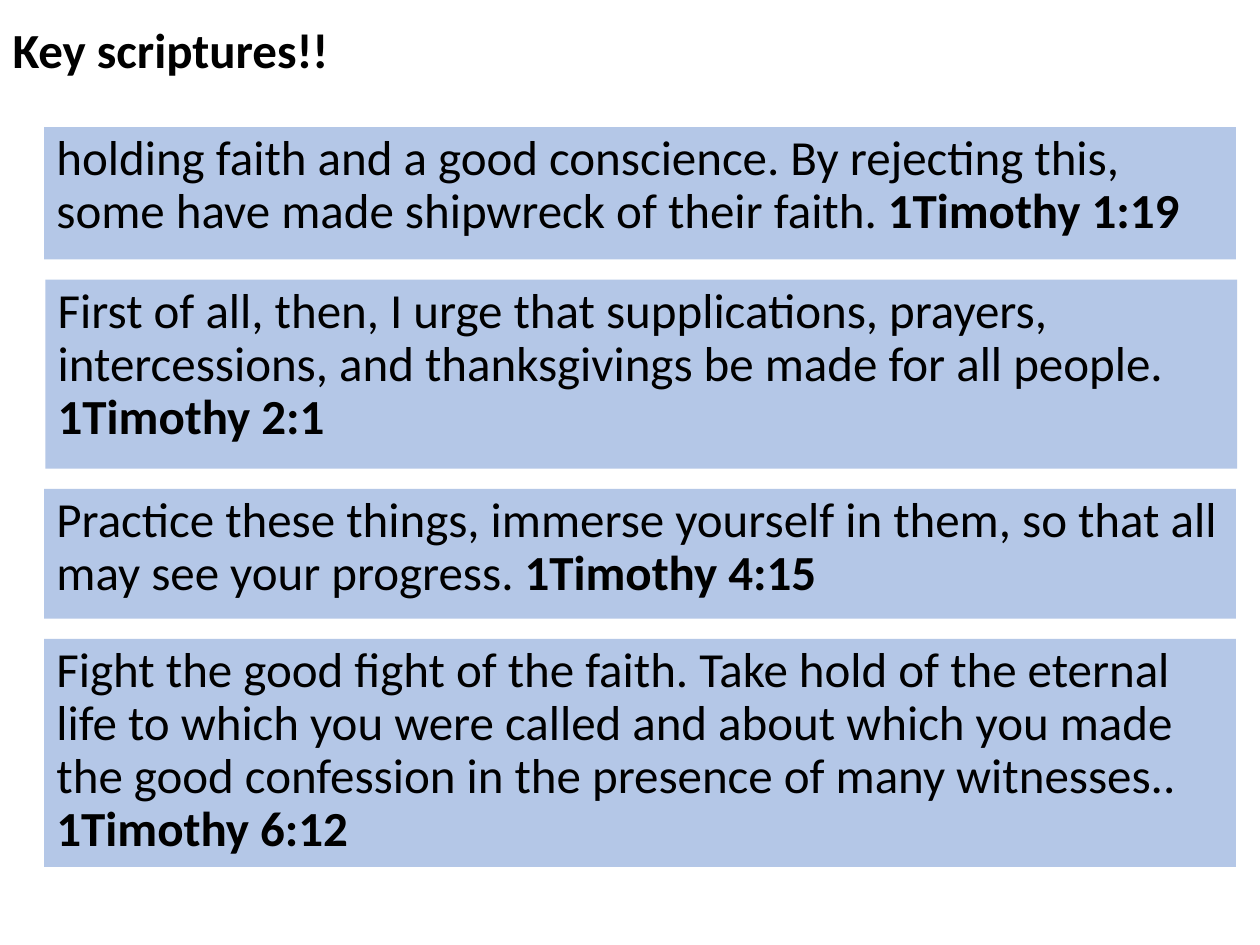
from pptx import Presentation
from pptx.dml.color import RGBColor
from pptx.enum.shapes import MSO_SHAPE
from pptx.enum.text import MSO_ANCHOR, MSO_AUTO_SIZE, PP_ALIGN
from pptx.util import Inches, Pt


def color(code):
    return RGBColor.from_string(code)


class Deck:
    font = "Calibri"
    size = 28
    ink = "000000"
    panel = "B4C7E7"
    width = 9.46

    def __init__(self):
        self.prs = Presentation()
        self.prs.slide_width = Inches(10)
        self.prs.slide_height = Inches(7.5)
        self.slide = self.prs.slides.add_slide(self.prs.slide_layouts[5])

    def text(self, shape, runs):
        frame = shape.text_frame
        frame.word_wrap = True
        frame.auto_size = MSO_AUTO_SIZE.NONE
        frame.vertical_anchor = MSO_ANCHOR.TOP
        para = frame.paragraphs[0]
        para.alignment = PP_ALIGN.LEFT
        para.line_spacing = 0.9
        para.space_before = Pt(10)
        for words, bold in runs:
            run = para.add_run()
            run.text = words
            run.font.name = self.font
            run.font.size = Pt(self.size)
            run.font.bold = bold
            run.font.color.rgb = color(self.ink)

    def title(self, words, left, top, height):
        shape = self.slide.shapes.title
        shape.left, shape.top = Inches(left), Inches(top)
        shape.width, shape.height = Inches(self.width), Inches(height)
        self.text(shape, [(words, True)])

    def verse(self, words, source, left, top, height):
        shape = self.slide.shapes.add_shape(
            MSO_SHAPE.RECTANGLE, Inches(left), Inches(top),
            Inches(self.width), Inches(height))
        shape.shadow.inherit = False
        shape.fill.solid()
        shape.fill.fore_color.rgb = color(self.panel)
        shape.line.fill.background()
        self.text(shape, [(words + " ", False), (source, True)])


VERSES = [
    ("holding faith and a good conscience. By rejecting this, some have made "
     "shipwreck of their faith.", "1Timothy 1:19", 0.35, 1.05),
    ("First of all, then, I urge that supplications, prayers, intercessions, "
     "and thanksgivings be made for all people.", "1Timothy 2:1", 0.36, 1.5),
    ("Practice these things, immerse yourself in them, so that all may see "
     "your progress.", "1Timothy 4:15", 0.35, 1.03),
    ("Fight the good fight of the faith. Take hold of the eternal life to "
     "which you were called and about which you made the good confession in "
     "the presence of many witnesses..", "1Timothy 6:12", 0.35, 1.81),
]
GAP = 0.16


def main():
    deck = Deck()
    deck.title("Key scriptures!!", 0, 0.16, 0.61)
    top = 1.01
    for words, source, left, height in VERSES:
        deck.verse(words, source, left, top, height)
        top += height + GAP
    deck.prs.save("out.pptx")


if __name__ == "__main__":
    main()
